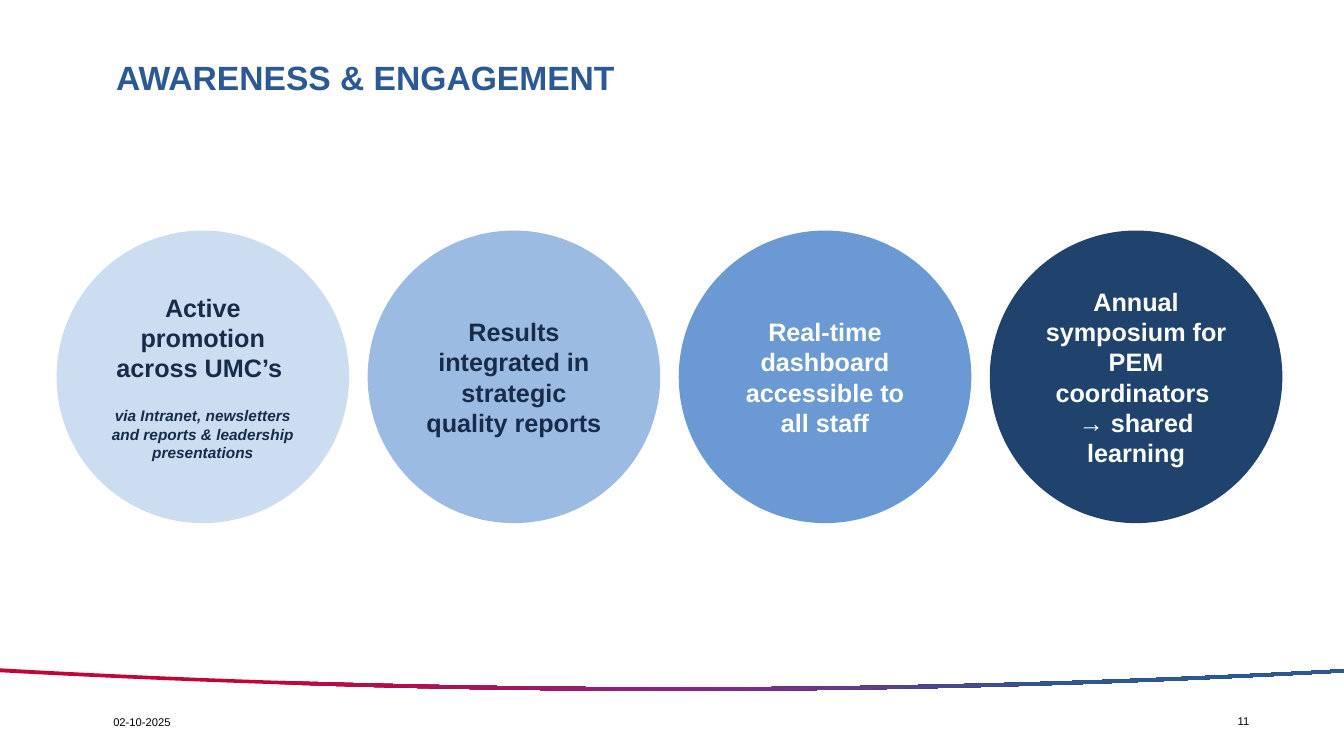
from pptx import Presentation
from pptx.dml.color import RGBColor
from pptx.enum.shapes import MSO_SHAPE
from pptx.enum.text import MSO_ANCHOR, MSO_AUTO_SIZE, PP_ALIGN
from pptx.oxml.ns import qn
from pptx.util import Pt
from copy import deepcopy

HUES = {
    "red": "C10538", "plum": "8C2383", "blue": "2B5993",
    "pale": "CDDDF1", "light": "9CBBE2", "mid": "6A99D4", "deep": "20436E",
    "navy": "162C4A", "white": "FFFFFF", "black": "000000",
}


def hue(name):
    return RGBColor.from_string(HUES[name])


def write(para, text, color, **form):
    para.text = text
    para.font.name = "Arial"
    para.font.color.rgb = hue(color)
    for key, value in form.items():
        setattr(para.font, key, value)


deck = Presentation()
deck.slide_width, deck.slide_height = Pt(960), Pt(540)
slide = deck.slides.add_slide(deck.slide_layouts[5])
shapes = slide.shapes

# Curved band: corners and control points, then each long edge becomes a curve
points = [(Pt(x), Pt(y)) for x, y in (
    (0, 480.2), (320, 497.5), (640, 498.2), (960, 480.2),
    (960, 478.1), (640, 495.4), (320, 495.4), (0, 477.4))]
build = shapes.build_freeform(*points[0])
build.add_line_segments(points[1:], close=True)
band = build.convert_to_shape()
edges = list(band._element.iter(qn("a:lnTo")))
for first in (0, 4):
    curve = edges[first]
    curve.tag = qn("a:cubicBezTo")
    for edge in edges[first + 1:first + 3]:
        curve.append(edge[0])
        edge.getparent().remove(edge)

# Band colours
band.shadow.inherit = False
band.line.fill.background()
band.fill.gradient()
band.fill.gradient_angle = 0
stops = band._element.spPr.find(qn("a:gradFill")).find(qn("a:gsLst"))
stops.append(deepcopy(stops[0]))
blend = ((0.2, "red"), (0.5, "plum"), (0.8, "blue"))
for stop, (place, name) in zip(band.fill.gradient_stops, blend):
    stop.position = place
    stop.color.rgb = hue(name)

# Title
title = shapes.title
title.left, title.top, title.width, title.height = Pt(83), Pt(28), Pt(822), Pt(57)
frame = title.text_frame
layout = {
    "margin_left": 0, "margin_right": 0, "margin_top": 0, "margin_bottom": 0,
    "vertical_anchor": MSO_ANCHOR.MIDDLE, "auto_size": MSO_AUTO_SIZE.NONE,
    "word_wrap": True,
}
for key, value in layout.items():
    setattr(frame, key, value)
head = frame.paragraphs[0]
write(head, "AWARENESS & ENGAGEMENT", "blue", size=Pt(24), bold=True)
head.alignment = PP_ALIGN.LEFT
head.line_spacing = 0.9

# Date and page number
for text, left, top, width in (("02-10-2025", 73.8, 507.6, 142), ("11", 877, 506.9, 41)):
    box = shapes.add_textbox(Pt(left), Pt(top), Pt(width), Pt(17.3))
    box.text_frame.word_wrap = True
    write(box.text_frame.paragraphs[0], text, "black", size=Pt(8))

# Four circles: fill, text colour, paragraphs of (text, size, italic, space before)
circles = (
    ("pale", "navy", (
        ("Active promotion across UMC’s ", 18, False, 0),
        ("via Intranet, newsletters and reports & leadership presentations", 11, True, 16.8))),
    ("light", "navy", (
        ("Results integrated in strategic quality reports", 18, False, 0),)),
    ("mid", "white", (
        ("Real-time dashboard accessible to all staff", 18, False, 0),)),
    ("deep", "white", (
        ("Annual symposium for PEM coordinators ", 18, False, 0),
        ("→ shared learning", 18, False, 0))),
)
for i, (back, ink, lines) in enumerate(circles):
    disc = shapes.add_shape(MSO_SHAPE.OVAL, Pt(40.4 + 222.2 * i), Pt(164.7), Pt(209), Pt(209))
    disc.shadow.inherit = False
    disc.fill.solid()
    disc.fill.fore_color.rgb = hue(back)
    disc.line.fill.background()
    frame = disc.text_frame
    frame.word_wrap = True
    frame.vertical_anchor = MSO_ANCHOR.MIDDLE
    for n, (text, size, slant, gap) in enumerate(lines):
        para = frame.add_paragraph() if n else frame.paragraphs[0]
        write(para, text, ink, size=Pt(size), bold=True, italic=slant)
        para.alignment = PP_ALIGN.CENTER
        if gap:
            para.space_before = Pt(gap)

deck.save("out.pptx")
